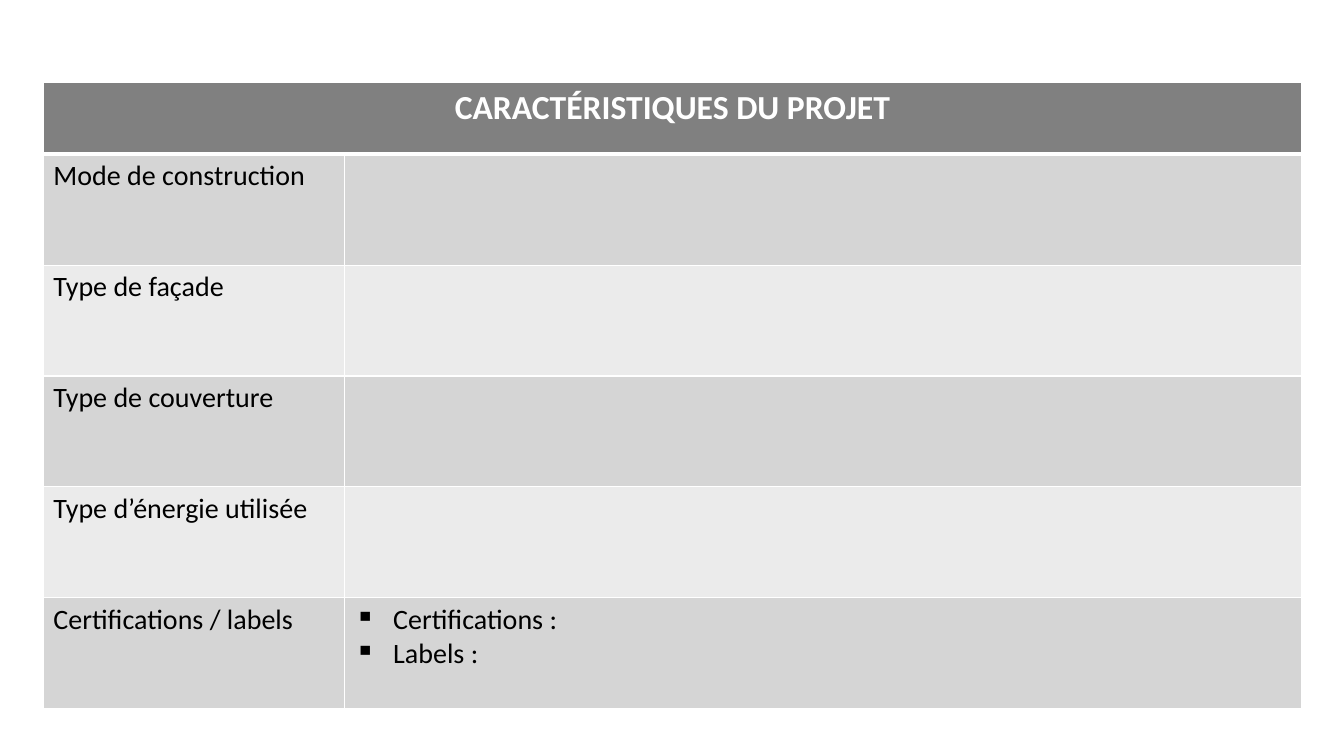
from dataclasses import dataclass

from lxml.etree import SubElement
from pptx import Presentation
from pptx.dml.color import RGBColor
from pptx.enum.text import PP_ALIGN
from pptx.oxml.ns import qn
from pptx.table import _Cell
from pptx.text.text import _Paragraph
from pptx.util import Emu, Pt

PX = 9144  # EMU per px, 100 px to the inch


@dataclass(frozen=True)
class Theme:
    font: str = "Calibri"
    header_size: int = 24
    body_size: int = 20
    header_fill: str = "808080"
    band_fills: tuple[str, str] = ("D5D5D5", "EBEBEB")
    white: str = "FFFFFF"
    black: str = "000000"
    thin_line: int = 1
    thick_line: int = 3


@dataclass(frozen=True)
class Feature:
    label: str
    bullets: tuple[str, ...] = ()


THEME = Theme()
HEADING = "CARACTÉRISTIQUES DU PROJET"
FEATURES = [
    Feature("Mode de construction"),
    Feature("Type de façade"),
    Feature("Type de couverture"),
    Feature("Type d’énergie utilisée"),
    Feature("Certifications / labels", ("Certifications :", "Labels :")),
]
LEFT, TOP = 43, 82
COLUMN_WIDTHS = (299, 949)
HEADER_HEIGHT, ROW_HEIGHT = 71, 110
BULLET_INDENT = 38


def px(length: int) -> Emu:
    return Emu(length * PX)


def style_cell(cell: _Cell, fill: str, top: int, bottom: int) -> None:
    """Draw the four borders, then the fill."""
    tc_pr = cell._tc.get_or_add_tcPr()
    widths = {"L": THEME.thin_line, "R": THEME.thin_line, "T": top, "B": bottom}
    for side, width in widths.items():
        line = SubElement(tc_pr, qn(f"a:ln{side}"), w=str(Pt(width)))
        solid = SubElement(line, qn("a:solidFill"))
        SubElement(solid, qn("a:srgbClr"), val=THEME.white)
    cell.fill.solid()
    cell.fill.fore_color.rgb = RGBColor.from_string(fill)


def add_text(p: _Paragraph, text: str, size: int, color: str, bold: bool = False) -> None:
    r = p.add_run()
    r.text = text
    r.font.name = THEME.font
    r.font.size = Pt(size)
    r.font.bold = bold
    r.font.color.rgb = RGBColor.from_string(color)


def add_bullet(p: _Paragraph) -> None:
    p_pr = p._p.get_or_add_pPr()
    p_pr.set("marL", str(px(BULLET_INDENT)))
    p_pr.set("indent", str(-px(BULLET_INDENT)))
    SubElement(p_pr, qn("a:buChar"), char="▪")


def main() -> None:
    prs = Presentation()
    prs.slide_width, prs.slide_height = px(1333), px(750)
    s = prs.slides.add_slide(prs.slide_layouts[6])

    # Table grid
    height = HEADER_HEIGHT + ROW_HEIGHT * len(FEATURES)
    table = s.shapes.add_table(
        len(FEATURES) + 1, len(COLUMN_WIDTHS),
        px(LEFT), px(TOP), px(sum(COLUMN_WIDTHS)), px(height),
    ).table
    for column, width in zip(table.columns, COLUMN_WIDTHS):
        column.width = px(width)
    for i, row in enumerate(table.rows):
        row.height = px(ROW_HEIGHT if i else HEADER_HEIGHT)

    # Header across both columns
    header = table.cell(0, 0)
    header.merge(table.cell(0, 1))
    for cell in table.rows[0].cells:
        style_cell(cell, THEME.header_fill, THEME.thin_line, THEME.thick_line)
    p = header.text_frame.paragraphs[0]
    p.alignment = PP_ALIGN.CENTER
    add_text(p, HEADING, THEME.header_size, THEME.white, bold=True)

    # One banded row per feature
    for i, feature in enumerate(FEATURES):
        label, value = table.rows[i + 1].cells
        top = THEME.thin_line if i else THEME.thick_line
        for cell in (label, value):
            style_cell(cell, THEME.band_fills[i % 2], top, THEME.thin_line)
        add_text(label.text_frame.paragraphs[0], feature.label, THEME.body_size, THEME.black)
        tf = value.text_frame
        for n, bullet in enumerate(feature.bullets):
            p = tf.add_paragraph() if n else tf.paragraphs[0]
            add_bullet(p)
            add_text(p, bullet, THEME.body_size, THEME.black)

    prs.save("out.pptx")


if __name__ == "__main__":
    main()
